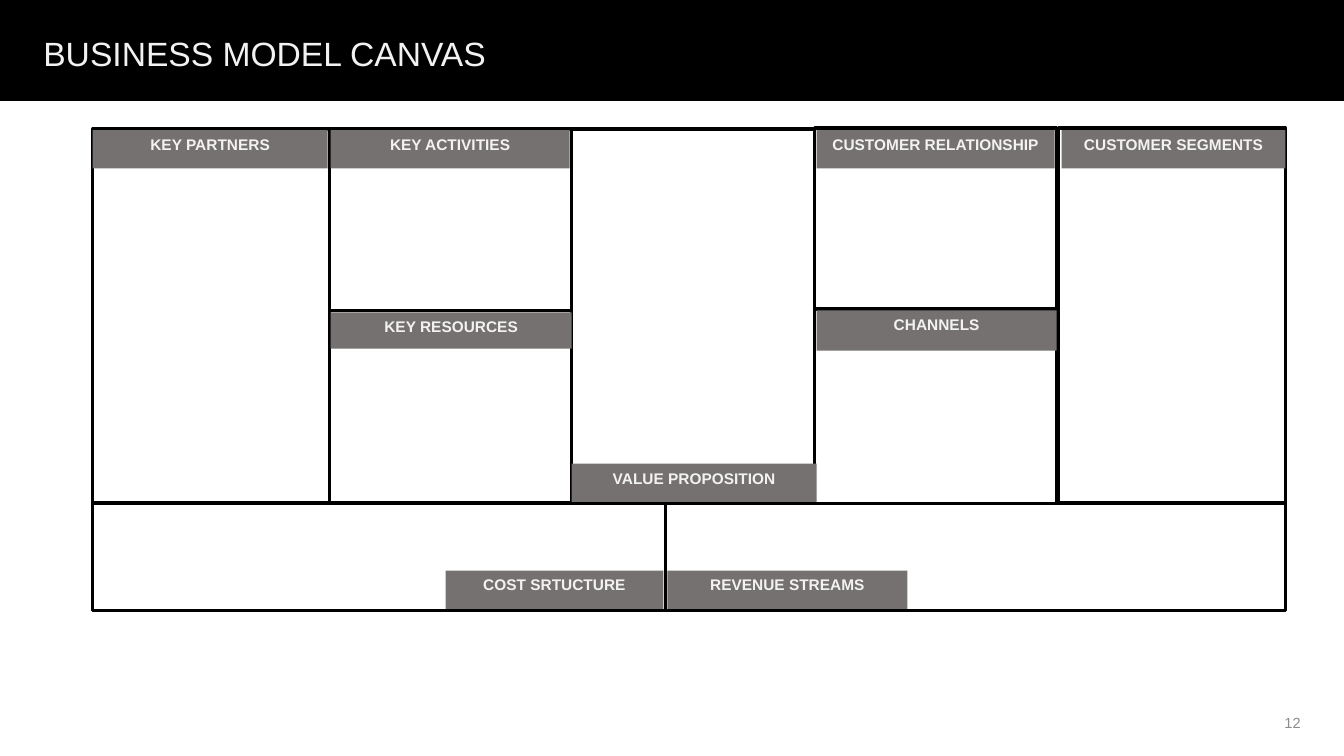
from dataclasses import dataclass

from pptx import Presentation
from pptx.dml.color import RGBColor
from pptx.enum.shapes import MSO_SHAPE
from pptx.enum.text import MSO_ANCHOR, MSO_AUTO_SIZE, PP_ALIGN
from pptx.shapes.autoshape import Shape
from pptx.slide import Slide
from pptx.util import Emu, Pt

PX = 9144  # 100 px to the inch

BLACK = RGBColor(0x00, 0x00, 0x00)
WHITE = RGBColor(0xFF, 0xFF, 0xFF)
GREY = RGBColor(0x76, 0x71, 0x71)
PALE = RGBColor(0xF2, 0xF2, 0xF2)
NUMBER_GREY = RGBColor(0x8C, 0x8C, 0x8C)


@dataclass(frozen=True)
class Box:
    x: int
    y: int
    w: int
    h: int

    def emu(self) -> tuple[Emu, ...]:
        return tuple(Emu(v * PX) for v in (self.x, self.y, self.w, self.h))


@dataclass(frozen=True)
class Label:
    text: str
    box: Box


CELLS = [
    Box(92, 128, 235, 371),
    Box(657, 499, 618, 107),
    Box(567, 128, 242, 371),
    Box(1050, 127, 225, 372),
    Box(92, 499, 568, 107),
    Box(327, 308, 240, 191),
    Box(327, 128, 240, 180),
    Box(808, 307, 240, 193),
    Box(808, 127, 240, 179),
]

LABELS = [
    Label("KEY PARTNERS", Box(92, 129, 233, 38)),
    Label("KEY ACTIVITIES", Box(328, 129, 237, 38)),
    Label("KEY RESOURCES", Box(328, 310, 239, 36)),
    Label("VALUE PROPOSITION", Box(567, 460, 243, 38)),
    Label("CUSTOMER RELATIONSHIP", Box(810, 129, 236, 38)),
    Label("CHANNELS", Box(810, 308, 238, 40)),
    Label("CUSTOMER SEGMENTS", Box(1053, 129, 222, 38)),
    Label("COST SRTUCTURE", Box(442, 566, 216, 38)),
    Label("REVENUE STREAMS", Box(662, 566, 238, 38)),
]


def add_rect(s: Slide, box: Box, fill: RGBColor, line_pt: float = 0) -> Shape:
    """Add a rectangle; a line width of 0 leaves it without an outline."""
    sp = s.shapes.add_shape(MSO_SHAPE.RECTANGLE, *box.emu())
    sp.shadow.inherit = False
    sp.fill.solid()
    sp.fill.fore_color.rgb = fill
    if line_pt:
        sp.line.color.rgb = BLACK
        sp.line.width = Pt(line_pt)
    else:
        sp.line.fill.background()
    return sp


def set_text(sp: Shape, text: str, size: float, color: RGBColor, align: PP_ALIGN,
             anchor: MSO_ANCHOR = MSO_ANCHOR.TOP, bold: bool = False) -> None:
    tf = sp.text_frame
    frame_format = {"word_wrap": True, "auto_size": MSO_AUTO_SIZE.NONE,
                    "vertical_anchor": anchor}
    for name, value in frame_format.items():
        setattr(tf, name, value)
    p = tf.paragraphs[0]
    p.alignment = align
    r = p.add_run()
    r.text = text
    font_format = {"name": "Arial", "size": Pt(size), "bold": bold}
    for name, value in font_format.items():
        setattr(r.font, name, value)
    r.font.color.rgb = color


def add_header(s: Slide) -> None:
    add_rect(s, Box(0, 0, 1333, 100), BLACK, 1)
    title = s.shapes.title
    title.left, title.top, title.width, title.height = Box(33, 28, 1142, 50).emu()
    set_text(title, "BUSINESS MODEL CANVAS", 24, PALE, PP_ALIGN.LEFT)
    # The title has to lie in front of the header bar.
    title.element.getparent().append(title.element)


def main() -> None:
    prs = Presentation()
    prs.slide_width, prs.slide_height = Emu(1333 * PX), Emu(750 * PX)
    s = prs.slides.add_slide(prs.slide_layouts[5])

    for cell in CELLS:
        add_rect(s, cell, WHITE, 2.25)
    for label in LABELS:
        sp = add_rect(s, label.box, GREY)
        set_text(sp, label.text, 11, PALE, PP_ALIGN.CENTER, bold=True)
    add_header(s)

    number = s.shapes.add_textbox(*Box(1000, 697, 300, 40).emu())
    set_text(number, "12", 10.5, NUMBER_GREY, PP_ALIGN.RIGHT, MSO_ANCHOR.MIDDLE)

    prs.save("out.pptx")


if __name__ == "__main__":
    main()
